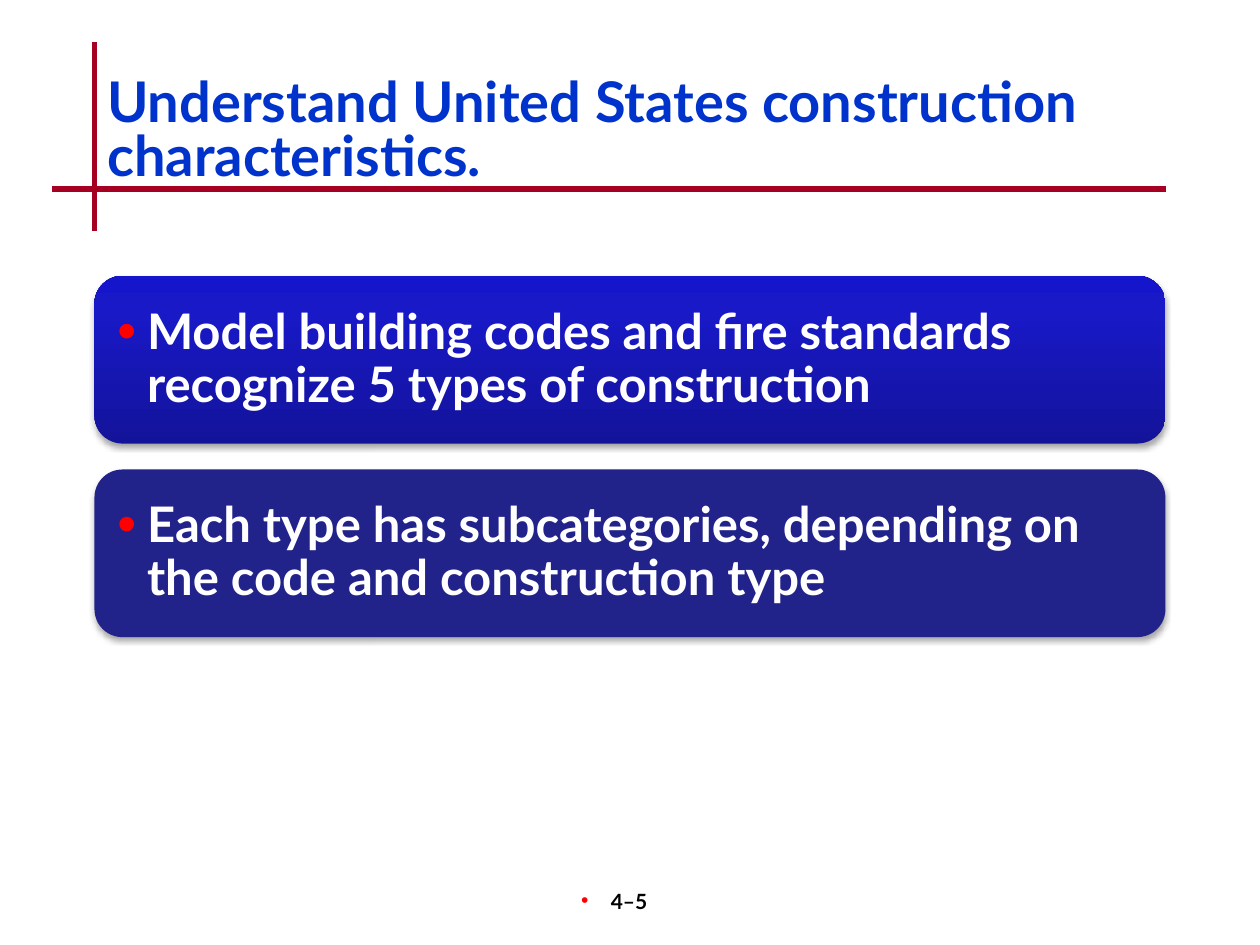
from typing import NamedTuple

from lxml.etree import SubElement
from pptx import Presentation
from pptx.dml.color import RGBColor
from pptx.enum.shapes import MSO_CONNECTOR, MSO_SHAPE
from pptx.enum.text import MSO_ANCHOR, MSO_AUTO_SIZE, PP_ALIGN
from pptx.oxml import parse_xml
from pptx.oxml.ns import nsdecls, qn
from pptx.util import Pt

FONT = "Lato"
BLACK = RGBColor(0x00, 0x00, 0x00)
WHITE = RGBColor(0xFF, 0xFF, 0xFF)
TITLE_BLUE = RGBColor(0x00, 0x33, 0xCC)
RULE_RED = RGBColor(0xA5, 0x00, 0x21)
BULLET_RED = RGBColor(0xFF, 0x00, 0x00)
PANEL_NAVY = RGBColor(0x22, 0x22, 0x8B)
GRADIENT_STOPS = [
    (0, RGBColor(0x13, 0x13, 0x9A)),
    (80, RGBColor(0x19, 0x19, 0xC8)),
    (100, RGBColor(0x15, 0x15, 0xCC)),
]

PANEL_LEFT, PANEL_TOP = 54, 157.7
PANEL_WIDTH, PANEL_HEIGHT, PANEL_PITCH = 612, 95.8, 110.6


class Rule(NamedTuple):
    x1: float
    y1: float
    x2: float
    y2: float


class Panel(NamedTuple):
    text: str
    gradient: bool


RULES = [Rule(54, 24, 54, 132), Rule(30, 108, 666, 108)]
PANELS = [
    Panel("Model building codes and fire standards recognize 5 types of construction", True),
    Panel("Each type has subcategories, depending on the code and construction type", False),
]


def style_font(paragraph, size: float, color: RGBColor) -> None:
    for run in paragraph.runs:
        run.font.name = FONT
        run.font.size = Pt(size)
        run.font.bold = True
        run.font.color.rgb = color


def add_bullet(paragraph, indent: float, size_percent: int) -> None:
    properties = paragraph._p.get_or_add_pPr()
    properties.set("marL", str(Pt(indent)))
    properties.set("indent", str(-Pt(indent)))
    color = SubElement(properties, qn("a:buClr"))
    SubElement(color, qn("a:srgbClr"), val=str(BULLET_RED))
    SubElement(properties, qn("a:buSzPct"), val=str(size_percent * 1000))
    SubElement(properties, qn("a:buFont"), typeface="Arial")
    SubElement(properties, qn("a:buChar"), char="•")


def add_rule(slide, rule: Rule) -> None:
    connector = slide.shapes.add_connector(
        MSO_CONNECTOR.STRAIGHT, *(Pt(value) for value in rule))
    connector.line.color.rgb = RULE_RED
    connector.line.width = Pt(3)
    SubElement(connector._element.spPr, qn("a:effectLst"))


def fill_gradient(shape) -> None:
    """Fill with the three blue stops, running from bottom to top."""
    stops = "".join(
        f'<a:gs pos="{percent * 1000}"><a:srgbClr val="{color}"/></a:gs>'
        for percent, color in GRADIENT_STOPS)
    gradient = parse_xml(
        f'<a:gradFill {nsdecls("a")} rotWithShape="1"><a:gsLst>{stops}</a:gsLst>'
        '<a:lin ang="16200000" scaled="0"/></a:gradFill>')
    shape._element.spPr.find(qn("a:prstGeom")).addnext(gradient)


def add_soft_shadow(shape) -> None:
    shape.shadow.inherit = False
    effects = shape._element.spPr.find(qn("a:effectLst"))
    effects.append(parse_xml(
        f'<a:outerShdw {nsdecls("a")} blurRad="{Pt(3.1)}" dist="{Pt(1.8)}" '
        'dir="5400000" rotWithShape="0"><a:srgbClr val="000000">'
        '<a:alpha val="35000"/></a:srgbClr></a:outerShdw>'))


def add_panel(slide, panel: Panel, top: float) -> None:
    shape = slide.shapes.add_shape(
        MSO_SHAPE.ROUNDED_RECTANGLE,
        Pt(PANEL_LEFT), Pt(top), Pt(PANEL_WIDTH), Pt(PANEL_HEIGHT))
    if panel.gradient:
        fill_gradient(shape)
    else:
        shape.fill.solid()
        shape.fill.fore_color.rgb = PANEL_NAVY
    shape.line.fill.background()
    add_soft_shadow(shape)

    frame = shape.text_frame
    frame.text = panel.text
    frame.word_wrap = True
    frame.vertical_anchor = MSO_ANCHOR.MIDDLE
    frame.margin_left = frame.margin_right = Pt(8.4)
    frame.margin_top = frame.margin_bottom = Pt(8.4)
    paragraph = frame.paragraphs[0]
    paragraph.alignment = PP_ALIGN.LEFT
    paragraph.line_spacing = 0.9
    add_bullet(paragraph, 17, 110)
    style_font(paragraph, 28, WHITE)


def set_title(slide, text: str) -> None:
    title = slide.shapes.title
    title.left, title.top, title.width, title.height = Pt(54), Pt(42), Pt(624), Pt(66)
    frame = title.text_frame
    frame.text = text
    frame.auto_size = MSO_AUTO_SIZE.NONE
    frame.vertical_anchor = MSO_ANCHOR.TOP
    paragraph = frame.paragraphs[0]
    paragraph.alignment = PP_ALIGN.LEFT
    paragraph.line_spacing = 0.8
    style_font(paragraph, 32, TITLE_BLUE)


def add_page_label(slide, text: str) -> None:
    frame = slide.shapes.add_textbox(Pt(282), Pt(504), Pt(150), Pt(36)).text_frame
    frame.text = text
    frame.word_wrap = True
    frame.margin_left, frame.margin_right = Pt(0), Pt(12)
    paragraph = frame.paragraphs[0]
    paragraph.alignment = PP_ALIGN.CENTER
    add_bullet(paragraph, 17, 100)
    style_font(paragraph, 12, BLACK)


def main() -> None:
    presentation = Presentation()
    presentation.slide_width, presentation.slide_height = Pt(720), Pt(540)
    title_only = presentation.slide_layouts[5]
    slide = presentation.slides.add_slide(title_only)
    for rule in RULES:
        add_rule(slide, rule)
    add_page_label(slide, "4–5")
    set_title(slide, "Understand United States construction characteristics.")
    for index, panel in enumerate(PANELS):
        add_panel(slide, panel, PANEL_TOP + index * PANEL_PITCH)
    presentation.save("out.pptx")


if __name__ == "__main__":
    main()
